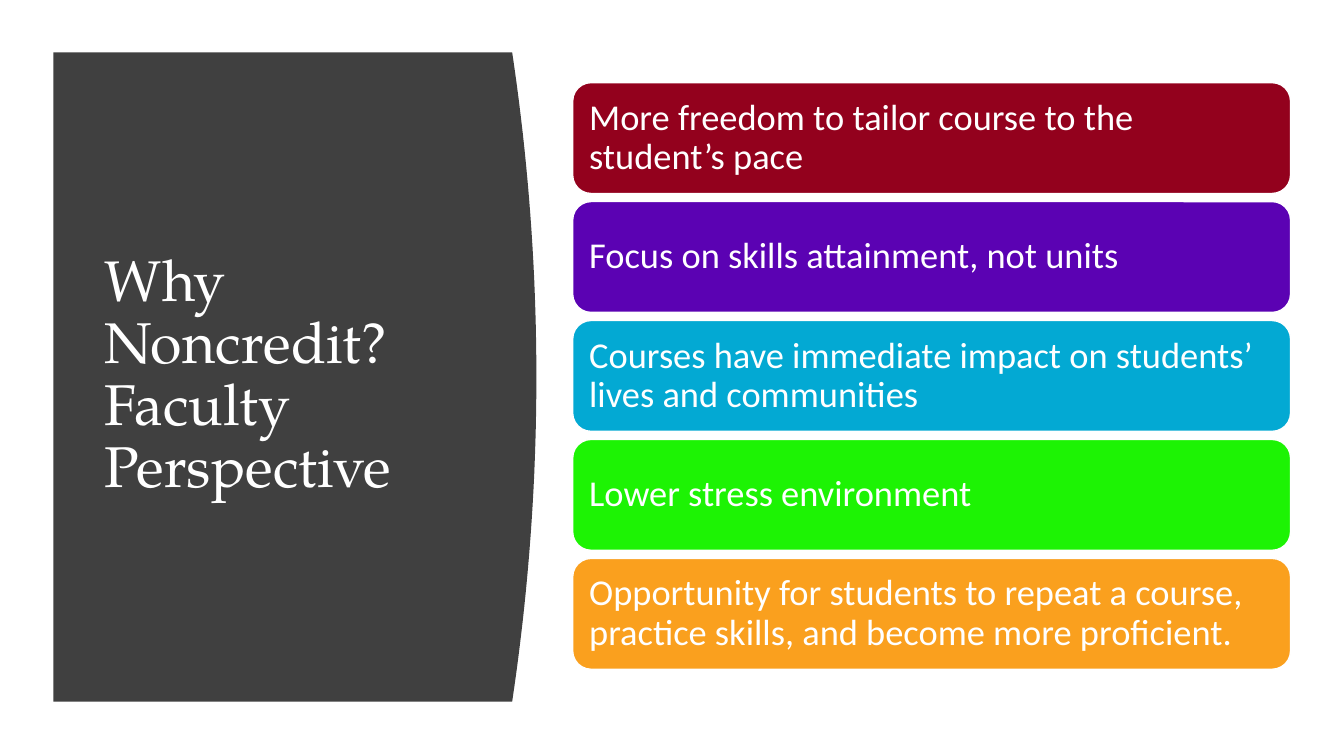
from pptx import Presentation
from pptx import util as u
from pptx.dml.color import RGBColor
from pptx.enum import shapes, text

WHITE = RGBColor(0xFF, 0xFF, 0xFF)
DARK = RGBColor(0x40, 0x40, 0x40)
RED = RGBColor(0x93, 0x01, 0x1D)
PURPLE = RGBColor(0x5B, 0x02, 0xB3)
BLUE = RGBColor(0x03, 0xA9, 0xD3)
GREEN = RGBColor(0x1D, 0xF3, 0x04)
ORANGE = RGBColor(0xFA, 0xA0, 0x1E)

REASONS = [
    ("More freedom to tailor course to the student’s pace", RED),
    ("Focus on skills attainment, not units", PURPLE),
    ("Courses have immediate impact on students’ lives and communities", BLUE),
    ("Lower stress environment", GREEN),
    ("Opportunity for students to repeat a course, practice skills, "
     "and become more proficient.", ORANGE),
]


def set_text(shape, words, font, size, inset):
    frame = shape.text_frame
    frame.text = words
    frame.word_wrap = True
    frame.auto_size = text.MSO_AUTO_SIZE.NONE
    frame.vertical_anchor = text.MSO_ANCHOR.MIDDLE
    frame.margin_left = frame.margin_right = u.Inches(inset)
    para = frame.paragraphs[0]
    para.alignment = text.PP_ALIGN.LEFT
    para.line_spacing = 0.9
    para.font.name = font
    para.font.size = u.Pt(size)
    para.font.color.rgb = WHITE


def add_panel(slide):
    left, top, edge, bulge, half = 0.53, 0.52, 5.08, 0.24, 3.22
    steps = 40
    points = []
    for i in range(steps + 1):
        t = 2 * i / steps - 1
        points.append((u.Inches(edge + bulge * (1 - t * t)),
                       u.Inches(top + half * (1 + t))))
    points.append((u.Inches(left), u.Inches(top + 2 * half)))
    form = slide.shapes.build_freeform(u.Inches(left), u.Inches(top))
    form.add_line_segments(points, close=True)
    panel = form.convert_to_shape()
    panel.shadow.inherit = False
    panel.fill.solid()
    panel.fill.fore_color.rgb = DARK
    panel.line.fill.background()
    return panel


def add_title(slide):
    title = slide.shapes.title
    title.left, title.top = u.Inches(0.94), u.Inches(1.11)
    title.width, title.height = u.Inches(3.74), u.Inches(5.24)
    set_text(title, "Why Noncredit? Faculty Perspective",
             "TeX Gyre Pagella", 41, 0.1)
    return title


def add_card(slide, top, words, color):
    card = slide.shapes.add_shape(
        shapes.MSO_SHAPE.ROUNDED_RECTANGLE,
        u.Inches(5.68), u.Inches(top), u.Inches(7.12), u.Inches(1.1))
    card.shadow.inherit = False
    card.fill.solid()
    card.fill.fore_color.rgb = color
    card.line.color.rgb = WHITE
    card.line.width = u.Pt(1)
    set_text(card, words, "Calibri", 26, 0.11)


def main():
    deck = Presentation()
    deck.slide_width, deck.slide_height = u.Inches(13.33), u.Inches(7.5)
    slide = deck.slides.add_slide(deck.slide_layouts[5])
    title = add_title(slide)
    title.element.addprevious(add_panel(slide).element)
    for i, (words, color) in enumerate(REASONS):
        add_card(slide, 0.82 + 1.18 * i, words, color)
    deck.save("out.pptx")


if __name__ == "__main__":
    main()
